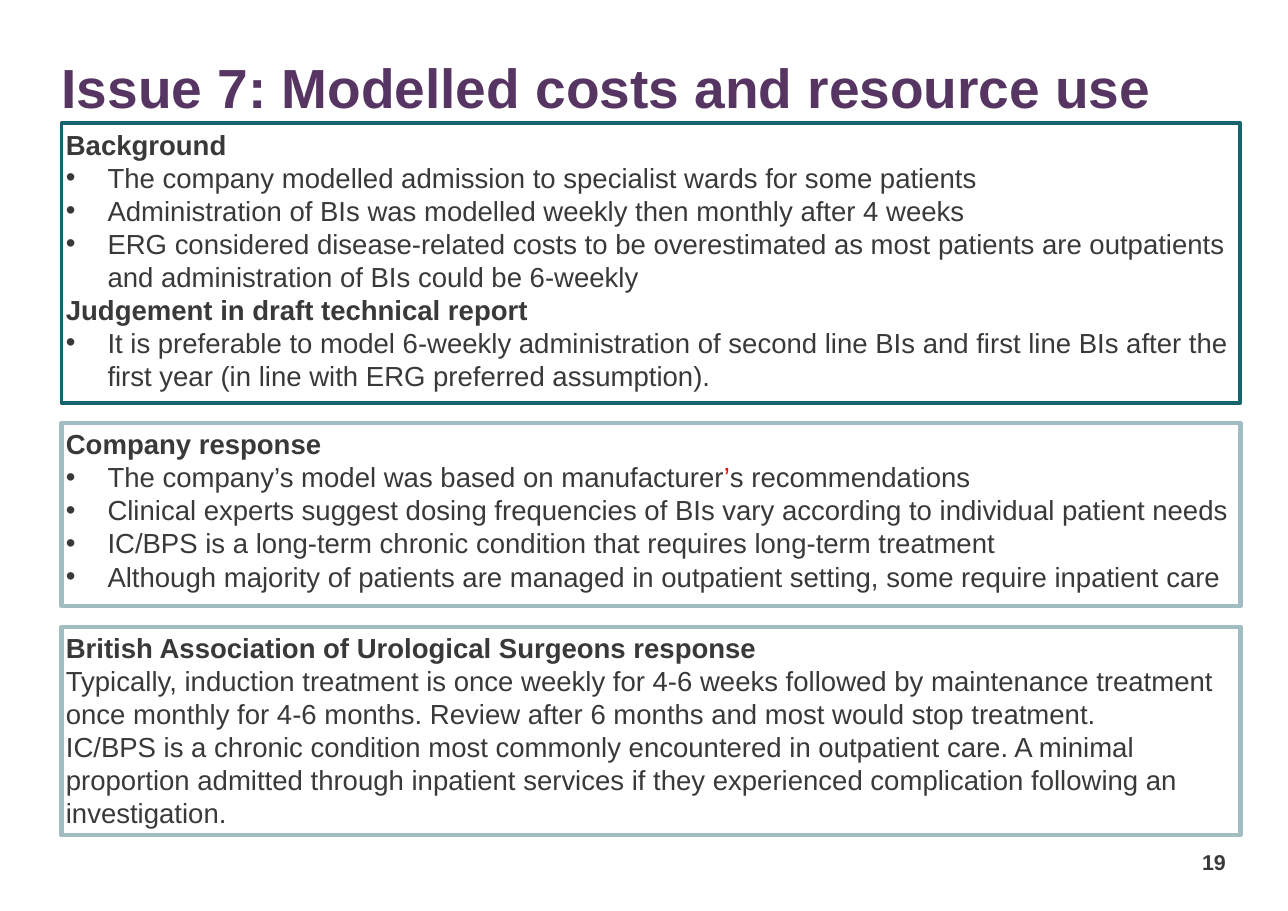
from lxml.etree import SubElement
from pptx import Presentation
from pptx.dml.color import RGBColor
from pptx.enum.shapes import MSO_SHAPE as Shape
from pptx.enum.text import MSO_ANCHOR as Anchor, MSO_AUTO_SIZE as AutoSize, PP_ALIGN as Align
from pptx.oxml.ns import qn
from pptx.util import Cm, Pt

TEXT, PURPLE, RED = "393938", "573562", "FF0000"
TEAL, PALE_TEAL = "18646E", "A2BDC1"
LEFT, WIDTH = 1.42, 27.18

BACKGROUND = [
    ("heading", "Background"),
    ("bullet", "The company modelled admission to specialist wards for some patients"),
    ("bullet", "Administration of BIs was modelled weekly then monthly after 4 weeks"),
    ("bullet", "ERG considered disease-related costs to be overestimated as most patients "
               "are outpatients and administration of BIs could be 6-weekly"),
    ("heading", "Judgement in draft technical report"),
    ("bullet", "It is preferable to model 6-weekly administration of second line BIs and first "
               "line BIs after the first year (in line with ERG preferred assumption)."),
]
COMPANY = [
    ("heading", "Company response"),
    ("bullet", [("The company’s model was based on manufacturer", TEXT), ("’", RED),
                ("s recommendations", TEXT)]),
    ("bullet", "Clinical experts suggest dosing frequencies of BIs vary according to "
               "individual patient needs"),
    ("bullet", "IC/BPS is a long-term chronic condition that requires long-term treatment"),
    ("bullet", "Although majority of patients are managed in outpatient setting, some "
               "require inpatient care"),
]
SURGEONS = [
    ("heading", "British Association of Urological Surgeons response"),
    ("plain", "Typically, induction treatment is once weekly for 4-6 weeks followed by maintenance "
              "treatment once monthly for 4-6 months. Review after 6 months and most would "
              "stop treatment."),
    ("plain", "IC/BPS is a chronic condition most commonly encountered in outpatient care. "
              "A minimal proportion admitted through inpatient services if they experienced "
              "complication following an investigation."),
]


def rgb(colour):
    """Turn a hex string into a colour."""
    return RGBColor.from_string(colour)


def place(shape, left, top, width, height):
    """Set the position and size of a shape in centimetres."""
    shape.left, shape.top, shape.width, shape.height = map(Cm, (left, top, width, height))


def prepare_frame(frame, inset=0, anchor=Anchor.TOP):
    """Set wrapping, insets and anchor of a text frame."""
    frame.word_wrap = True
    frame.auto_size = AutoSize.NONE
    frame.vertical_anchor = anchor
    frame.margin_left = frame.margin_right = frame.margin_top = frame.margin_bottom = Cm(inset)


def add_bullet(paragraph, indent):
    """Give a paragraph a round bullet with a hanging indent."""
    properties = paragraph._p.get_or_add_pPr()
    properties.set("marL", str(Cm(indent)))
    properties.set("indent", str(-Cm(indent)))
    bullet_colour = SubElement(properties, qn("a:buClr"))
    SubElement(bullet_colour, qn("a:srgbClr"), val=TEXT)
    SubElement(properties, qn("a:buFont"), typeface="Arial")
    SubElement(properties, qn("a:buChar"), char="•")


def write(paragraph, text, size=18, colour=TEXT, bold=False, align=Align.LEFT,
          line_height=None, bullet=False):
    """Write a string, or a list of (string, colour) parts, into a paragraph."""
    if bullet:
        add_bullet(paragraph, 0.96)
    paragraph.alignment = align
    paragraph.space_before = paragraph.space_after = Pt(0)
    if line_height:
        paragraph.line_spacing = Pt(line_height)
    parts = [(text, colour)] if isinstance(text, str) else text
    for wording, part_colour in parts:
        run = paragraph.add_run()
        run.text = wording
        run.font.name, run.font.size, run.font.bold = "Arial", Pt(size), bold
        run.font.color.rgb = rgb(part_colour)


def add_panel(slide, top, height, outline, outline_width, content):
    """Add an outlined panel with headings, bullets and plain paragraphs."""
    panel = slide.shapes.add_shape(Shape.RECTANGLE, Cm(LEFT), Cm(top), Cm(WIDTH), Cm(height))
    panel.shadow.inherit = False
    panel.fill.background()
    panel.line.color.rgb = rgb(outline)
    panel.line.width = Pt(outline_width)
    frame = panel.text_frame
    prepare_frame(frame, inset=0.1)
    for index, (kind, text) in enumerate(content):
        paragraph = frame.add_paragraph() if index else frame.paragraphs[0]
        write(paragraph, text, bold=kind == "heading", bullet=kind == "bullet", line_height=21.6)


def add_title(slide, text):
    """Move and format the title placeholder."""
    title = slide.shapes.title
    place(title, LEFT, 1.27, WIDTH, 2.13)
    prepare_frame(title.text_frame)
    write(title.text_frame.paragraphs[0], text, size=36, colour=PURPLE, bold=True, line_height=42)


def add_page_number(slide, number):
    """Add the page number at the bottom right."""
    page_number = slide.shapes.add_textbox(Cm(26.87), Cm(19.25), Cm(1.4), Cm(0.91))
    prepare_frame(page_number.text_frame, anchor=Anchor.BOTTOM)
    write(page_number.text_frame.paragraphs[0], number, size=14, bold=True, align=Align.RIGHT)


def main():
    """Build the slide and save it."""
    presentation = Presentation()
    presentation.slide_width, presentation.slide_height = Cm(29.7), Cm(21)
    slide = presentation.slides.add_slide(presentation.slide_layouts[5])
    add_title(slide, "Issue 7: Modelled costs and resource use")
    add_page_number(slide, "19")
    add_panel(slide, 9.75, 4.22, PALE_TEAL, 3, COMPANY)
    add_panel(slide, 2.84, 6.45, TEAL, 2.25, BACKGROUND)
    add_panel(slide, 14.45, 4.8, PALE_TEAL, 3, SURGEONS)
    presentation.save("out.pptx")


if __name__ == "__main__":
    main()
